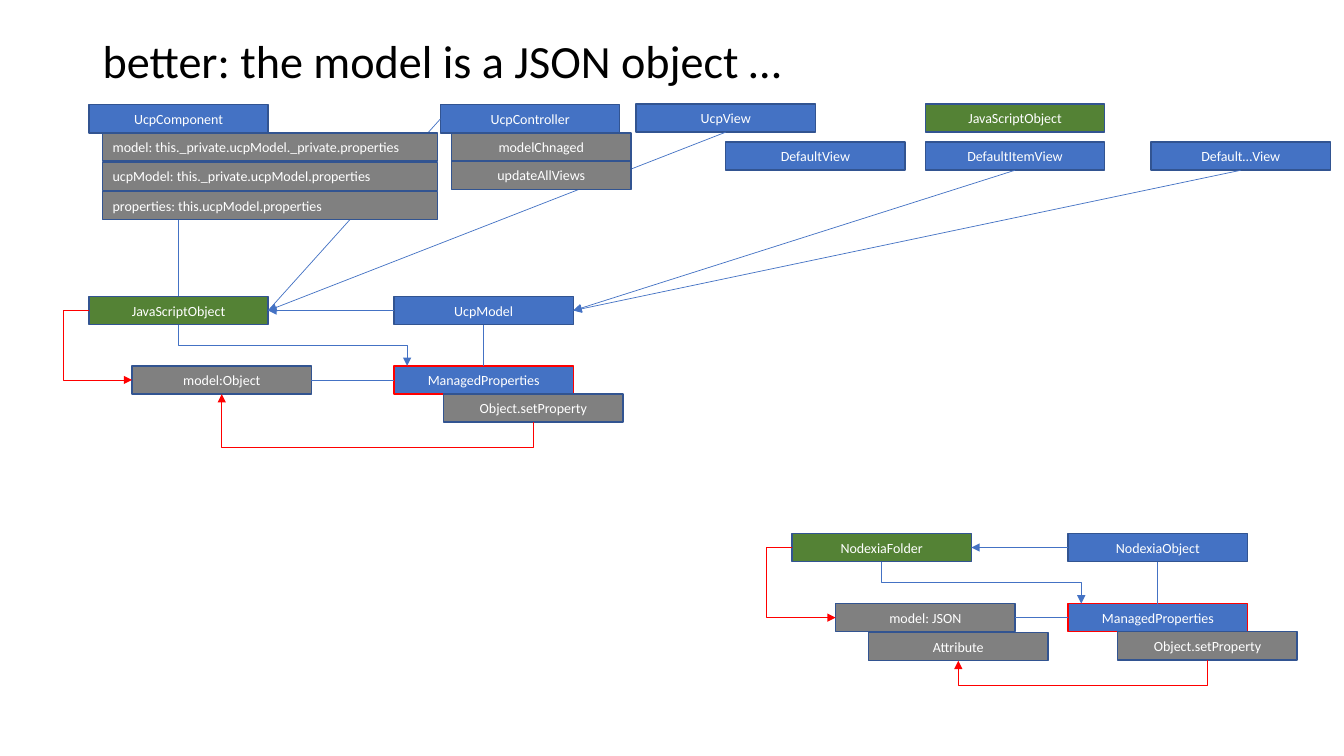
import pptx
import pptx.dml.color
import pptx.enum.shapes
import pptx.enum.text
import pptx.oxml.ns
import pptx.util
from lxml import etree
from pptx.util import Cm

COLORS = {
    "blue": "4472C4", "green": "548235", "gray": "808080",
    "border": "325491", "red": "FF0000", "white": "FFFFFF", "black": "000000",
}
BOX_W, BOX_H = 4.52, 0.71
LOOP_GAP = 0.64
TOP, LEFT, BOTTOM, RIGHT = range(4)
STRAIGHT = pptx.enum.shapes.MSO_CONNECTOR.STRAIGHT
ELBOW = pptx.enum.shapes.MSO_CONNECTOR.ELBOW
ALIGN = pptx.enum.text.PP_ALIGN
qn = pptx.oxml.ns.qn


def add_box(label, left, top, fill, border="border", width=BOX_W, align=ALIGN.CENTER):
    box = slide.shapes.add_shape(pptx.enum.shapes.MSO_SHAPE.RECTANGLE,
                                 Cm(left), Cm(top), Cm(width), Cm(BOX_H))
    box.shadow.inherit = False
    box.fill.solid()
    box.fill.fore_color.rgb = pptx.dml.color.RGBColor.from_string(COLORS[fill])
    box.line.color.rgb = pptx.dml.color.RGBColor.from_string(COLORS[border])
    box.line.width = pptx.util.Pt(1)
    box.text_frame.vertical_anchor = pptx.enum.text.MSO_ANCHOR.MIDDLE
    paragraph = box.text_frame.paragraphs[0]
    paragraph.alignment = align
    run = paragraph.add_run()
    run.text = label
    run.font.name = "Calibri"
    run.font.size = pptx.util.Pt(10)
    run.font.color.rgb = pptx.dml.color.RGBColor.from_string(COLORS["white"])
    return box


def style_link(link, color, arrow, bend=None):
    """Set colour and arrowhead; bend is the elbow's position as a share of its length."""
    link.line.color.rgb = pptx.dml.color.RGBColor.from_string(COLORS[color])
    link.line.width = pptx.util.Pt(0.5)
    properties = link._element.spPr
    if arrow:
        etree.SubElement(link.line._get_or_add_ln(), qn("a:tailEnd"), type="triangle")
    etree.SubElement(properties, qn("a:effectLst"))
    if bend is not None:
        guides = properties.find(qn("a:prstGeom")).find(qn("a:avLst"))
        etree.SubElement(guides, qn("a:gd"), name="adj1", fmla=f"val {round(bend * 100000)}")


deck = pptx.Presentation()
deck.slide_width, deck.slide_height = Cm(33.87), Cm(19.05)
slide = deck.slides.add_slide(deck.slide_layouts[6])

title = slide.shapes.add_textbox(Cm(2.34), Cm(1.02), Cm(29.21), Cm(1.35)).text_frame
title.word_wrap = True
title.vertical_anchor = pptx.enum.text.MSO_ANCHOR.MIDDLE
title.paragraphs[0].line_spacing = 0.7
heading = title.paragraphs[0].add_run()
heading.text = "better: the model is a JSON object …"
heading.font.name = "Calibri"
heading.font.size = pptx.util.Pt(33)
heading.font.color.rgb = pptx.dml.color.RGBColor.from_string(COLORS["black"])

# Classes: key -> label, left, top, fill, border
classes = {
    "component": ("UcpComponent", 2.24, 2.64, "blue"),
    "controller": ("UcpController", 11.1, 2.64, "blue"),
    "view": ("UcpView", 16.03, 2.62, "blue"),
    "default view": ("DefaultView", 18.29, 3.58, "blue"),
    "item view": ("DefaultItemView", 23.32, 3.58, "blue"),
    "other view": ("Default…View", 29.01, 3.58, "blue"),
    "view object": ("JavaScriptObject", 23.32, 2.62, "green"),
    "object": ("JavaScriptObject", 2.24, 7.47, "green"),
    "ucp model": ("UcpModel", 9.93, 7.47, "blue"),
    "model": ("model:Object", 3.33, 9.22, "gray"),
    "managed": ("ManagedProperties", 9.93, 9.22, "blue", "red"),
    "setter": ("Object.setProperty", 11.18, 9.93, "gray"),
    "folder": ("NodexiaFolder", 19.96, 13.44, "green"),
    "folder object": ("NodexiaObject", 26.92, 13.44, "blue"),
    "json": ("model: JSON", 21.06, 15.21, "gray"),
    "json managed": ("ManagedProperties", 26.92, 15.21, "blue", "red"),
    "json setter": ("Object.setProperty", 28.17, 15.92, "gray"),
    "attribute": ("Attribute", 21.89, 15.94, "gray"),
}
boxes = {key: add_box(*details) for key, details in classes.items()}

# Straight links: from, side, to, side, arrow
for start, start_side, end, end_side, arrow in [
    ("object", RIGHT, "controller", LEFT, False),
    ("component", BOTTOM, "object", TOP, False),
    ("managed", TOP, "ucp model", BOTTOM, False),
    ("managed", LEFT, "model", RIGHT, False),
    ("view", BOTTOM, "object", RIGHT, True),
    ("ucp model", LEFT, "object", RIGHT, True),
    ("item view", BOTTOM, "ucp model", RIGHT, True),
    ("other view", BOTTOM, "ucp model", RIGHT, True),
    ("json managed", TOP, "folder object", BOTTOM, False),
    ("json managed", LEFT, "json", RIGHT, False),
    ("folder object", LEFT, "folder", RIGHT, True),
]:
    link = slide.shapes.add_connector(STRAIGHT, 0, 0, 0, 0)
    link.begin_connect(boxes[start], start_side)
    link.end_connect(boxes[end], end_side)
    style_link(link, "blue", arrow)

# Bent links of both property groups
for owner, model, managed, setter, target in [
    ("object", "model", "managed", "setter", "model"),
    ("folder", "json", "json managed", "json setter", "attribute"),
]:
    side_loop = slide.shapes.add_connector(ELBOW, 0, 0, 0, 0)
    side_loop.begin_connect(boxes[owner], LEFT)
    side_loop.end_connect(boxes[model], LEFT)
    style_link(side_loop, "red", True, -LOOP_GAP / (classes[model][1] - classes[owner][1]))

    owner_x, owner_y = classes[owner][1] + BOX_W / 2, classes[owner][2] + BOX_H
    managed_x, managed_y = classes[managed][1] + 0.33, classes[managed][2]
    setter_x, setter_y = classes[setter][1] + BOX_W / 2, classes[setter][2] + BOX_H
    target_x, target_y = classes[target][1] + BOX_W / 2, classes[target][2] + BOX_H
    for x1, y1, x2, y2, color, bend in [
        (owner_x, owner_y, managed_x, managed_y, "blue", 0.5),
        (setter_x, setter_y, target_x, target_y, "red", LOOP_GAP / (target_y - setter_y)),
    ]:
        # A quarter turn about the centre makes the elbow leave vertically
        mid_x, mid_y = (x1 + x2) / 2, (y1 + y2) / 2
        half_x, half_y = (x2 - x1) / 2, (y2 - y1) / 2
        link = slide.shapes.add_connector(ELBOW, Cm(mid_x - half_y), Cm(mid_y + half_x),
                                          Cm(mid_x + half_y), Cm(mid_y - half_x))
        link._element.spPr.find(qn("a:xfrm")).set("rot", "5400000")
        style_link(link, color, True, bend)

# Members lie over the links
for row, method in enumerate(["modelChnaged", "updateAllViews"]):
    add_box(method, 11.38, 3.35 + row * BOX_H, "gray")
for row, member in enumerate([
    "model: this._private.ucpModel._private.properties",
    "ucpModel: this._private.ucpModel.properties",
    "properties: this.ucpModel.properties",
]):
    add_box(member, 2.59, 3.35 + row * 0.74, "gray", width=8.43, align=ALIGN.LEFT)

deck.save("out.pptx")
